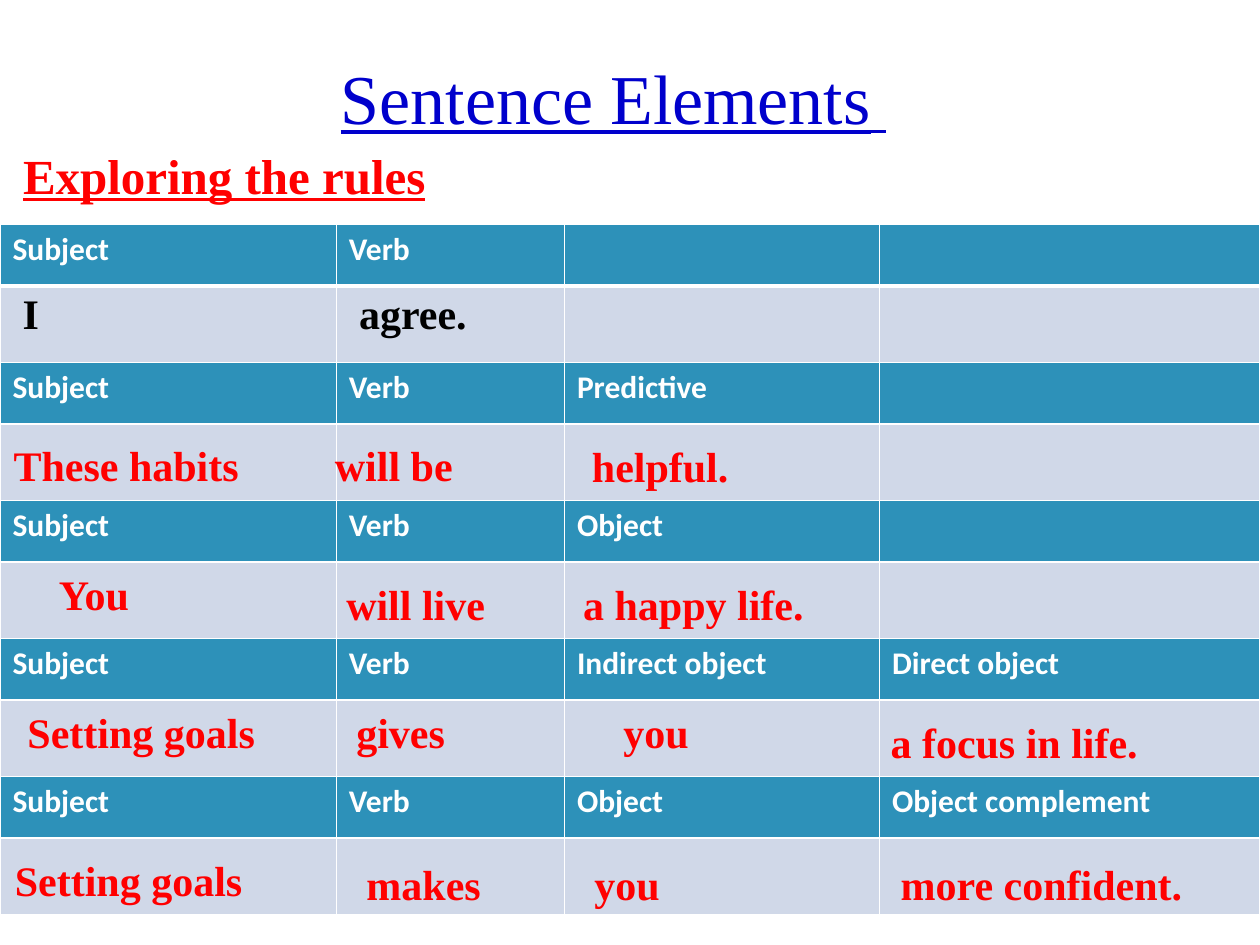
from itertools import accumulate

from lxml.etree import SubElement
from pptx import Presentation
from pptx.dml.color import RGBColor
from pptx.enum.text import MSO_ANCHOR, MSO_AUTO_SIZE, PP_ALIGN
from pptx.oxml.ns import qn
from pptx.util import Inches, Pt

WHITE = RGBColor(0xFF, 0xFF, 0xFF)
BLACK = RGBColor(0x00, 0x00, 0x00)
RED = RGBColor(0xFF, 0x00, 0x00)
TITLE_BLUE = RGBColor(0x00, 0x00, 0xCC)
HEADER_BLUE = RGBColor(0x2D, 0x91, 0xB9)
PALE_BLUE = RGBColor(0xD0, 0xD8, 0xE8)

TABLE_TOP, TABLE_HEIGHT = 1.78, 5.48
COLUMN_WIDTHS = [2.67, 1.81, 2.5, 3.02]
COLUMN_LEFTS = [0, *accumulate(COLUMN_WIDTHS)]
HEADERS = [
    ["Subject", "Verb", "", ""],
    ["Subject", "Verb", "Predictive", ""],
    ["Subject", "Verb", "Object", ""],
    ["Subject", "Verb", "Indirect object", "Direct object"],
    ["Subject", "Verb", "Object", "Object complement"],
]
FIRST_EXAMPLE = ["I", "agree.", "", ""]
PATTERN_HEIGHT = TABLE_HEIGHT / len(HEADERS)
HEADER_HEIGHT = 0.49
EXAMPLE_HEIGHT = PATTERN_HEIGHT - HEADER_HEIGHT
EXAMPLES = [
    [("These habits", 0.01, 0.07), ("will be", -0.11, 0.07), ("helpful.", 0.12, 0.08)],
    [("You", 0.37, 0), ("will live", -0.02, 0.08), ("a happy life.", 0.05, 0.08)],
    [("Setting goals", 0.12, 0), ("gives", 0.06, 0), ("you", 0.37, 0),
     ("a focus in life.", -0.01, 0.08)],
    [("Setting goals", 0.02, 0.08), ("makes", 0.14, 0.11), ("you", 0.14, 0.11),
     ("more confident.", 0.07, 0.11)],
]


def format_font(font, size, color, bold=False, underline=False, name="Times New Roman"):
    font.name = name
    font.size = Pt(size)
    font.bold = bold
    font.underline = underline
    font.color.rgb = color


def add_border(cell, side, width):
    line = SubElement(cell._tc.get_or_add_tcPr(), qn(f"a:ln{side}"), w=str(Pt(width)))
    fill = SubElement(line, qn("a:solidFill"))
    SubElement(fill, qn("a:srgbClr"), val=str(WHITE))


presentation = Presentation()
presentation.slide_width = Inches(10)
presentation.slide_height = Inches(7.5)
slide = presentation.slides.add_slide(presentation.slide_layouts[5])

title = slide.shapes.title
title.left, title.top, title.width, title.height = map(Inches, (0.37, 0.14, 9, 1.25))
title.text_frame.text = "Sentence Elements"
title.text_frame.auto_size = MSO_AUTO_SIZE.NONE
title.text_frame.vertical_anchor = MSO_ANCHOR.MIDDLE
paragraph = title.text_frame.paragraphs[0]
paragraph.alignment = PP_ALIGN.CENTER
paragraph.add_run().text = " "
for run, size in zip(paragraph.runs, (40, 36)):
    format_font(run.font, size, TITLE_BLUE, underline=True)

table = slide.shapes.add_table(
    2 * len(HEADERS), len(COLUMN_WIDTHS),
    0, Inches(TABLE_TOP), presentation.slide_width, Inches(TABLE_HEIGHT)).table
for column, width in zip(table.columns, COLUMN_WIDTHS):
    column.width = Inches(width)
for row_index, row in enumerate(table.rows):
    is_header = row_index % 2 == 0
    row.height = Inches(HEADER_HEIGHT if is_header else EXAMPLE_HEIGHT)
    for column_index, cell in enumerate(row.cells):
        add_border(cell, "L", 1)
        add_border(cell, "R", 1)
        add_border(cell, "T", 3 if row_index == 1 else 1)
        add_border(cell, "B", 3 if row_index == 0 else 1)
        cell.fill.solid()
        cell.fill.fore_color.rgb = HEADER_BLUE if is_header else PALE_BLUE
        paragraph = cell.text_frame.paragraphs[0]
        if is_header:
            paragraph.text = HEADERS[row_index // 2][column_index]
            format_font(paragraph.font, 18, WHITE, bold=True, name="Calibri")
        elif row_index == 1:
            paragraph.text = FIRST_EXAMPLE[column_index]
            cell.margin_left = Inches(0.18)
            format_font(paragraph.font, 24, BLACK, bold=True)
        for run in paragraph.runs:
            if is_header:
                format_font(run.font, 18, WHITE, bold=True, name="Calibri")
            else:
                format_font(run.font, 24, BLACK, bold=True)

heading = slide.shapes.add_textbox(*map(Inches, (-0.11, 0.76, 3.78, 1.25)))
heading.text_frame.word_wrap = True
heading.text_frame.vertical_anchor = MSO_ANCHOR.MIDDLE
heading.text_frame.text = "Exploring the rules"
paragraph = heading.text_frame.paragraphs[0]
paragraph.alignment = PP_ALIGN.CENTER
format_font(paragraph.runs[0].font, 28, RED, bold=True, underline=True)

for pattern, answers in enumerate(EXAMPLES, start=1):
    row_top = TABLE_TOP + pattern * PATTERN_HEIGHT + HEADER_HEIGHT
    for column_left, (words, shift, drop) in zip(COLUMN_LEFTS, answers):
        answer = slide.shapes.add_textbox(
            Inches(column_left + shift), Inches(row_top + drop), Inches(2.5), Inches(0.5))
        answer.text_frame.word_wrap = True
        answer.text_frame.auto_size = MSO_AUTO_SIZE.SHAPE_TO_FIT_TEXT
        answer.text_frame.text = words
        format_font(answer.text_frame.paragraphs[0].runs[0].font, 24, RED, bold=True)

presentation.save("out.pptx")
